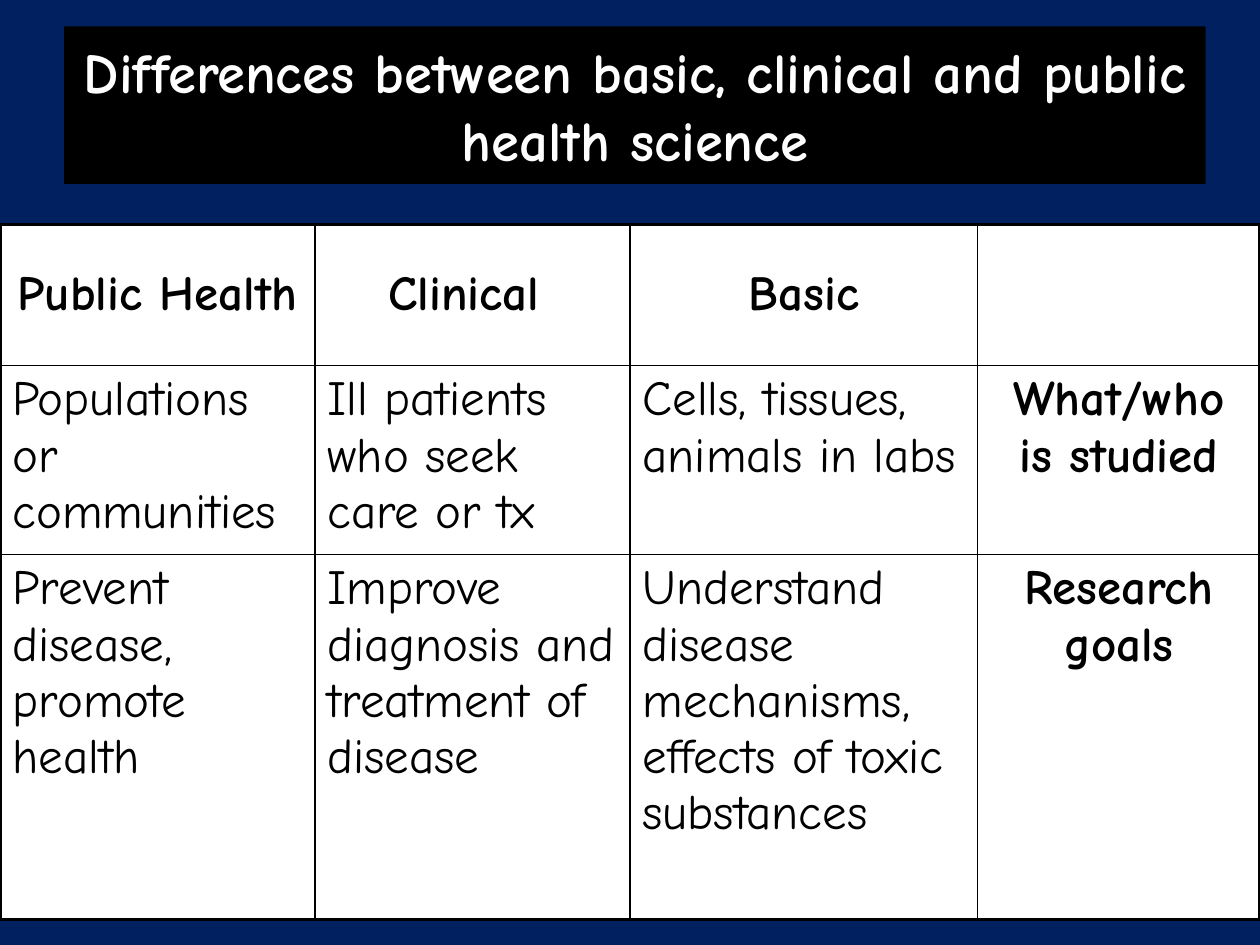
from dataclasses import dataclass
from lxml.etree import SubElement
from pptx import Presentation
from pptx.dml.color import RGBColor
from pptx.enum.text import MSO_ANCHOR, MSO_AUTO_SIZE, PP_ALIGN
from pptx.oxml.ns import qn
from pptx.util import Inches, Pt


@dataclass(frozen=True)
class Theme:
    font: str = "Comic Neue"
    navy: str = "002060"
    black: str = "000000"
    white: str = "FFFFFF"
    title: float = 32.4
    body: float = 28
    thin: float = 1
    thick: float = 2.25


THEME = Theme()
COLS = [2.5, 2.5, 2.76, 2.24]
ROWS = [1.12, 1.5, 2.9]
CELLS = [
    ["Public Health", "Clinical ", "Basic", ""],
    ["Populations or communities", "Ill patients who seek care or tx",
     "Cells, tissues, animals in labs", "What/who is studied"],
    ["Prevent disease, promote health",
     "Improve diagnosis and treatment of disease",
     "Understand disease mechanisms, effects of toxic substances",
     "Research goals"],
]


def paint(fill, color):
    fill.solid()
    fill.fore_color.rgb = RGBColor.from_string(color)


def write(frame, text, size, color, bold, align):
    para = frame.paragraphs[0]
    para.alignment = align
    run = para.add_run()
    run.text = text
    font = run.font
    font.name, font.size, font.bold = THEME.font, Pt(size), bold
    font.color.rgb = RGBColor.from_string(color)


def add_title(slide, box):
    title = slide.shapes.title
    title.left, title.top, title.width, title.height = map(Inches, box)
    paint(title.fill, THEME.black)
    frame = title.text_frame
    frame.word_wrap = True
    frame.auto_size = MSO_AUTO_SIZE.NONE
    frame.vertical_anchor = MSO_ANCHOR.MIDDLE
    write(frame, "Differences between basic, clinical and public health science",
          THEME.title, THEME.white, True, PP_ALIGN.CENTER)


def edge(cell, row, col):
    """Rule the cell, with thick lines on the outside of the table."""
    outer = {"L": col == 0, "R": col == len(COLS) - 1,
             "T": row == 0, "B": row == len(ROWS) - 1}
    props = cell._tc.get_or_add_tcPr()
    for side, thick in outer.items():
        width = Pt(THEME.thick if thick else THEME.thin)
        line = SubElement(props, qn(f"a:ln{side}"), w=str(width))
        fill = SubElement(line, qn("a:solidFill"))
        SubElement(fill, qn("a:srgbClr"), val=THEME.black)


def add_grid(slide, left, top):
    box = map(Inches, (left, top, sum(COLS), sum(ROWS)))
    table = slide.shapes.add_table(len(ROWS), len(COLS), *box).table
    for col, width in zip(table.columns, COLS):
        col.width = Inches(width)
    for row, height in zip(table.rows, ROWS):
        row.height = Inches(height)
    for r, texts in enumerate(CELLS):
        for c, text in enumerate(texts):
            cell = table.cell(r, c)
            edge(cell, r, c)
            paint(cell.fill, THEME.white)
            cell.vertical_anchor = MSO_ANCHOR.TOP if r else MSO_ANCHOR.MIDDLE
            if text:
                head = r == 0 or c == len(COLS) - 1
                align = PP_ALIGN.CENTER if head else PP_ALIGN.LEFT
                write(cell.text_frame, text, THEME.body, THEME.black, head, align)


def main():
    deck = Presentation()
    deck.slide_width, deck.slide_height = Inches(10), Inches(7.5)
    slide = deck.slides.add_slide(deck.slide_layouts[5])
    paint(slide.background.fill, THEME.navy)
    add_title(slide, (0.51, 0.21, 9.06, 1.25))
    add_grid(slide, 0, 1.78)
    deck.save("out.pptx")


if __name__ == "__main__":
    main()
